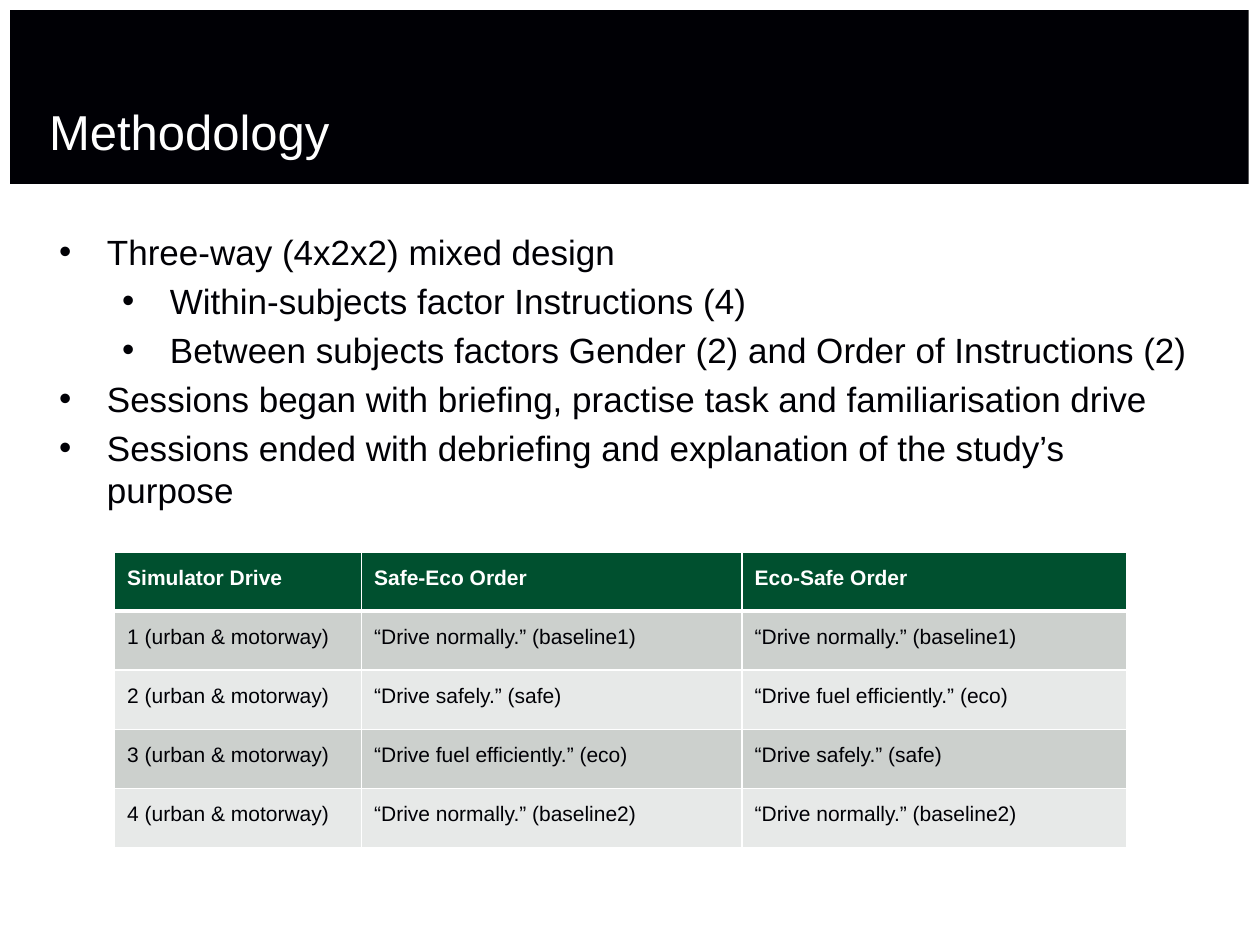
from dataclasses import dataclass

from lxml import etree
from pptx import Presentation
from pptx import util as u
from pptx.dml.color import RGBColor
from pptx.enum import shapes, text
from pptx.oxml.ns import qn


@dataclass(frozen=True)
class Theme:
    font: str = "Arial"
    ink: str = "000005"
    white: str = "FFFFFF"
    header: str = "00502F"
    bands: tuple = ("CCD0CD", "E7E9E8")
    title_size: int = 28
    body_size: int = 20
    table_size: int = 12


class SlideBuilder:
    def __init__(self, slide, theme):
        self.slide = slide
        self.theme = theme

    def run(self, paragraph, wording, size, color, bold=False):
        run = paragraph.add_run()
        run.text = wording
        run.font.name = self.theme.font
        run.font.size = u.Pt(size)
        run.font.bold = bold
        run.font.color.rgb = RGBColor.from_string(color)

    def place(self, shape, left, top, width, height):
        shape.left, shape.top = u.Inches(left), u.Inches(top)
        shape.width, shape.height = u.Inches(width), u.Inches(height)

    def banner(self, *box):
        shape = self.slide.shapes.add_shape(
            shapes.MSO_SHAPE.RECTANGLE, *map(u.Inches, box))
        shape.shadow.inherit = False
        shape.fill.solid()
        shape.fill.fore_color.rgb = RGBColor.from_string(self.theme.ink)
        shape.line.fill.background()
        # Send behind the title
        self.slide.shapes._spTree.insert(2, shape._element)

    def title(self, wording, *box):
        title = self.slide.shapes.title
        self.place(title, *box)
        frame = title.text_frame
        frame.margin_left = frame.margin_right = 0
        frame.margin_top = frame.margin_bottom = 0
        frame.vertical_anchor = text.MSO_ANCHOR.BOTTOM
        frame.auto_size = text.MSO_AUTO_SIZE.NONE
        paragraph = frame.paragraphs[0]
        paragraph.alignment = text.PP_ALIGN.LEFT
        self.run(paragraph, wording, self.theme.title_size, self.theme.white)

    def bullets(self, items, *box):
        shape = self.slide.shapes.add_textbox(*map(u.Inches, box))
        frame = shape.text_frame
        frame.word_wrap = True
        frame.auto_size = text.MSO_AUTO_SIZE.SHAPE_TO_FIT_TEXT
        for index, (level, wording) in enumerate(items):
            paragraph = frame.add_paragraph() if index else frame.paragraphs[0]
            paragraph.level = level
            properties = paragraph._p.get_or_add_pPr()
            properties.set("marL", str(u.Inches(0.38 + 0.5 * level)))
            properties.set("indent", str(u.Inches(-0.38)))
            if index:
                paragraph.space_before = u.Pt(0.2 * self.theme.body_size)
            etree.SubElement(properties, qn("a:buFont"), typeface=self.theme.font)
            etree.SubElement(properties, qn("a:buChar"), char="•")
            self.run(paragraph, wording, self.theme.body_size, self.theme.ink)

    def borders(self, cell, widths):
        properties = cell._tc.get_or_add_tcPr()
        for index, (side, width) in enumerate(widths.items()):
            line = etree.Element(qn(f"a:ln{side}"), w=str(u.Pt(width)))
            fill = etree.SubElement(line, qn("a:solidFill"))
            etree.SubElement(fill, qn("a:srgbClr"), val=self.theme.white)
            properties.insert(index, line)

    def table(self, rows, column_widths, row_height, left, top):
        frame = self.slide.shapes.add_table(
            len(rows), len(column_widths), u.Inches(left), u.Inches(top),
            u.Inches(sum(column_widths)), u.Inches(row_height * len(rows)))
        table = frame.table
        for column, width in zip(table.columns, column_widths):
            column.width = u.Inches(width)
        for row_index, row in enumerate(rows):
            table.rows[row_index].height = u.Inches(row_height)
            is_header = row_index == 0
            fill = self.theme.header if is_header else self.theme.bands[(row_index - 1) % 2]
            color = self.theme.white if is_header else self.theme.ink
            widths = {"L": 1, "R": 1, "T": 3 if row_index == 1 else 1,
                      "B": 3 if is_header else 1}
            for column_index, wording in enumerate(row):
                cell = table.cell(row_index, column_index)
                cell.fill.solid()
                cell.fill.fore_color.rgb = RGBColor.from_string(fill)
                self.borders(cell, widths)
                paragraph = cell.text_frame.paragraphs[0]
                paragraph.line_spacing = u.Pt(18)
                paragraph.space_after = u.Pt(6)
                self.run(paragraph, wording, self.theme.table_size, color, is_header)


def main():
    presentation = Presentation()
    presentation.slide_width = u.Inches(10)
    presentation.slide_height = u.Inches(7.5)
    slide = presentation.slides.add_slide(presentation.slide_layouts[5])
    builder = SlideBuilder(slide, Theme())

    # Heading
    builder.banner(0.08, 0.08, 9.83, 1.38)
    builder.title("Methodology", 0.39, 0.46, 5.63, 0.81)

    # Study design
    builder.bullets([
        (0, "Three-way (4x2x2) mixed design"),
        (1, "Within-subjects factor Instructions (4)"),
        (1, "Between subjects factors Gender (2) and Order of Instructions (2)"),
        (0, "Sessions began with briefing, practise task and familiarisation drive"),
        (0, "Sessions ended with debriefing and explanation of the study’s purpose"),
    ], 0.37, 1.78, 9.18, 2.39)

    # Instructions for each drive
    normal_first = "“Drive normally.” (baseline1)"
    normal_last = "“Drive normally.” (baseline2)"
    safe = "“Drive safely.” (safe)"
    eco = "“Drive fuel efficiently.” (eco)"
    orders = [(normal_first, normal_first), (safe, eco), (eco, safe),
              (normal_last, normal_last)]
    rows = [("Simulator Drive", "Safe-Eco Order", "Eco-Safe Order")]
    rows += [(f"{number} (urban & motorway)", *order)
             for number, order in enumerate(orders, 1)]
    builder.table(rows, (1.96, 3.02, 3.05), 0.47, 0.91, 4.38)

    presentation.save("out.pptx")


if __name__ == "__main__":
    main()
